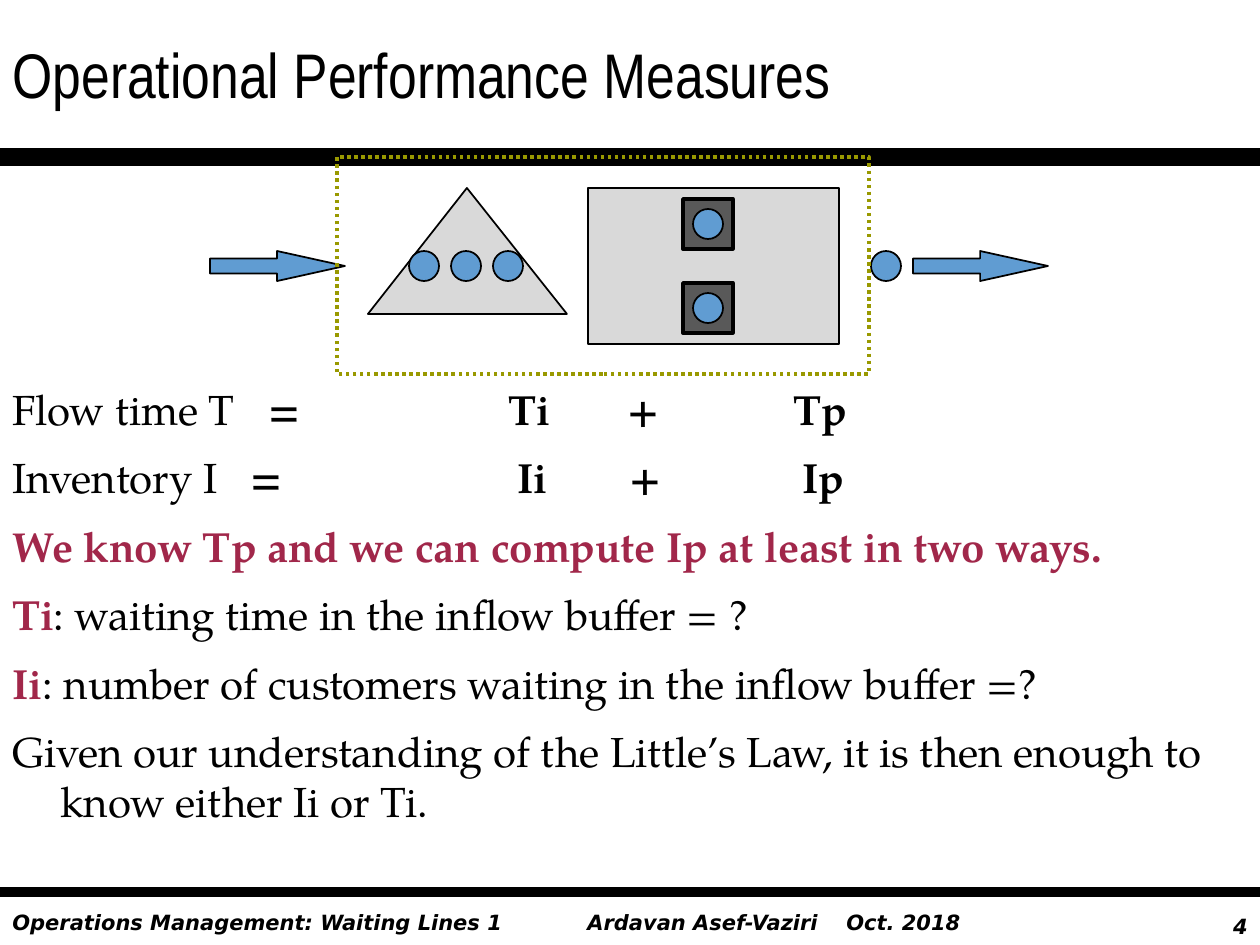
from lxml import etree
from pptx import Presentation
from pptx.dml.color import RGBColor
from pptx.enum.dml import MSO_LINE_DASH_STYLE as Dash
from pptx.enum.shapes import MSO_CONNECTOR, MSO_SHAPE as Preset
from pptx.enum.text import MSO_ANCHOR as Anchor, PP_ALIGN as Align
from pptx.oxml.ns import qn
from pptx.util import Emu, Pt

SCALE = 914400 / 126
WIDTH, HEIGHT = 1260, 945
COLORS = {
    "black": "000000", "buffer": "D9D9D9", "server": "595959",
    "flow": "609CD2", "boundary": "999900", "accent": "A1274A",
}
TITLE_FONT = {"name": "Arial Narrow", "size": Pt(36)}
BODY_FONT = {"name": "TeX Gyre Pagella", "size": Pt(24)}
FOOTER_FONT = {"name": "DejaVu Sans", "size": Pt(12), "bold": True, "italic": True}

TITLE = "Operational Performance Measures"
FOOTERS = [
    ("Operations Management: Waiting Lines 1", (0, 903, 588, 38), Align.LEFT, []),
    ("Ardavan Asef-Vaziri\tOct. 2018", (575, 903, 422, 38), Align.LEFT, [259]),
    ("4", (1166, 907, 94, 38), Align.RIGHT, []),
]
RULES = [(157, 10), (892, 6)]
BODY = [
    ([("Flow time T", "black", False), ("\t=\tTi\t+\tTp", "black", True)],
     [256, 496, 615, 781]),
    ([("Inventory I", "black", False), ("\t=\tIi\t+\tIp", "black", True)],
     [238, 505, 617, 790]),
    ([("We know Tp and we can compute Ip at least in two ways.", "accent", True)], []),
    ([("Ti", "accent", True),
      (": waiting time in the inflow buffer = ?", "black", False)], []),
    ([("Ii", "accent", True),
      (": number of customers waiting in the inflow buffer =?", "black", False)], []),
    ([("Given our understanding of the Little’s Law, it is then enough to "
       "know either Ii or Ti.", "black", False)], []),
]
HANGING = 48

BUFFER = [(368, 314), (467, 188), (567, 314)]
PROCESS = (588, 188, 251, 156)
BOUNDARY = (337, 157, 532, 217)
SERVER_X, SERVER_SIZE, SERVER_TOPS = 683, 50, (199, 283)
UNIT = 30
FLOW_TOP = 251
WAITING = [(409 + 42 * i, FLOW_TOP) for i in range(3)]
INSET = (SERVER_SIZE - UNIT) // 2
IN_SERVICE = [(SERVER_X + INSET, top + INSET) for top in SERVER_TOPS]
DEPARTED = [(871, FLOW_TOP)]
ARROW_LEFTS, ARROW_WIDTH = (913, 210), 135


def px(value):
    return Emu(round(value * SCALE))


def box(values):
    return [px(value) for value in values]


def color(name):
    return RGBColor.from_string(COLORS[name])


def paint(shape, fill, line="black", width=1):
    shape.shadow.inherit = False
    if fill:
        shape.fill.solid()
        shape.fill.fore_color.rgb = color(fill)
    else:
        shape.fill.background()
    shape.line.color.rgb = color(line)
    shape.line.width = Pt(width)
    return shape


def add_preset(slide, preset, place, fill, **line):
    return paint(slide.shapes.add_shape(preset, *box(place)), fill, **line)


def add_rule(slide, y, width):
    rule = slide.shapes.add_connector(MSO_CONNECTOR.STRAIGHT, *box((0, y, WIDTH, y)))
    rule.line.color.rgb = color("black")
    rule.line.width = Pt(width)
    etree.SubElement(rule._element.spPr, qn("a:effectLst"))


def add_run(paragraph, text, font, color_name="black"):
    run = paragraph.add_run()
    run.text = text
    for name, value in font.items():
        setattr(run.font, name, value)
    run.font.color.rgb = color(color_name)


def add_tabs(paragraph, stops):
    tabs = etree.SubElement(paragraph._p.get_or_add_pPr(), qn("a:tabLst"))
    for stop in stops:
        etree.SubElement(tabs, qn("a:tab"), pos=str(px(stop)), algn="l")


def add_text_box(slide, place, anchor=Anchor.TOP):
    frame = slide.shapes.add_textbox(*box(place)).text_frame
    frame.word_wrap = True
    frame.vertical_anchor = anchor
    return frame


def add_diagram(slide):
    builder = slide.shapes.build_freeform(*BUFFER[0], scale=SCALE)
    builder.add_line_segments(BUFFER[1:], close=True)
    paint(builder.convert_to_shape(), "buffer")
    add_preset(slide, Preset.RECTANGLE, PROCESS, "buffer")
    for top in SERVER_TOPS:
        add_preset(slide, Preset.RECTANGLE,
                   (SERVER_X, top, SERVER_SIZE, SERVER_SIZE), "server", width=2)
    for left, top in WAITING + IN_SERVICE + DEPARTED:
        add_preset(slide, Preset.OVAL, (left, top, UNIT, UNIT), "flow")
    for left in ARROW_LEFTS:
        arrow = add_preset(slide, Preset.RIGHT_ARROW,
                           (left, FLOW_TOP, ARROW_WIDTH, UNIT), "flow")
        arrow.adjustments[1] = 2.26
    boundary = add_preset(slide, Preset.RECTANGLE, BOUNDARY, None,
                          line="boundary", width=2)
    boundary.line.dash_style = Dash.ROUND_DOT


def add_body(slide):
    frame = add_text_box(slide, (0, 377, 1228, 505))
    for index, (runs, stops) in enumerate(BODY):
        paragraph = frame.add_paragraph() if index else frame.paragraphs[0]
        paragraph.space_before = Pt(4.3)
        paragraph.space_after = Pt(6)
        if stops:
            add_tabs(paragraph, stops)
        else:
            properties = paragraph._p.get_or_add_pPr()
            properties.set("marL", str(px(HANGING)))
            properties.set("indent", str(px(-HANGING)))
        for text, color_name, bold in runs:
            add_run(paragraph, text, {**BODY_FONT, "bold": bold}, color_name)


def main():
    presentation = Presentation()
    presentation.slide_width, presentation.slide_height = px(WIDTH), px(HEIGHT)
    slide = presentation.slides.add_slide(presentation.slide_layouts[6])
    for text, place, align, stops in FOOTERS:
        paragraph = add_text_box(slide, place).paragraphs[0]
        paragraph.alignment = align
        if stops:
            add_tabs(paragraph, stops)
        add_run(paragraph, text, FOOTER_FONT)
    for y, width in RULES:
        add_rule(slide, y, width)
    title = add_text_box(slide, (0, 0, WIDTH, 147), Anchor.MIDDLE)
    add_run(title.paragraphs[0], TITLE, TITLE_FONT)
    add_diagram(slide)
    add_body(slide)
    presentation.save("out.pptx")


if __name__ == "__main__":
    main()
